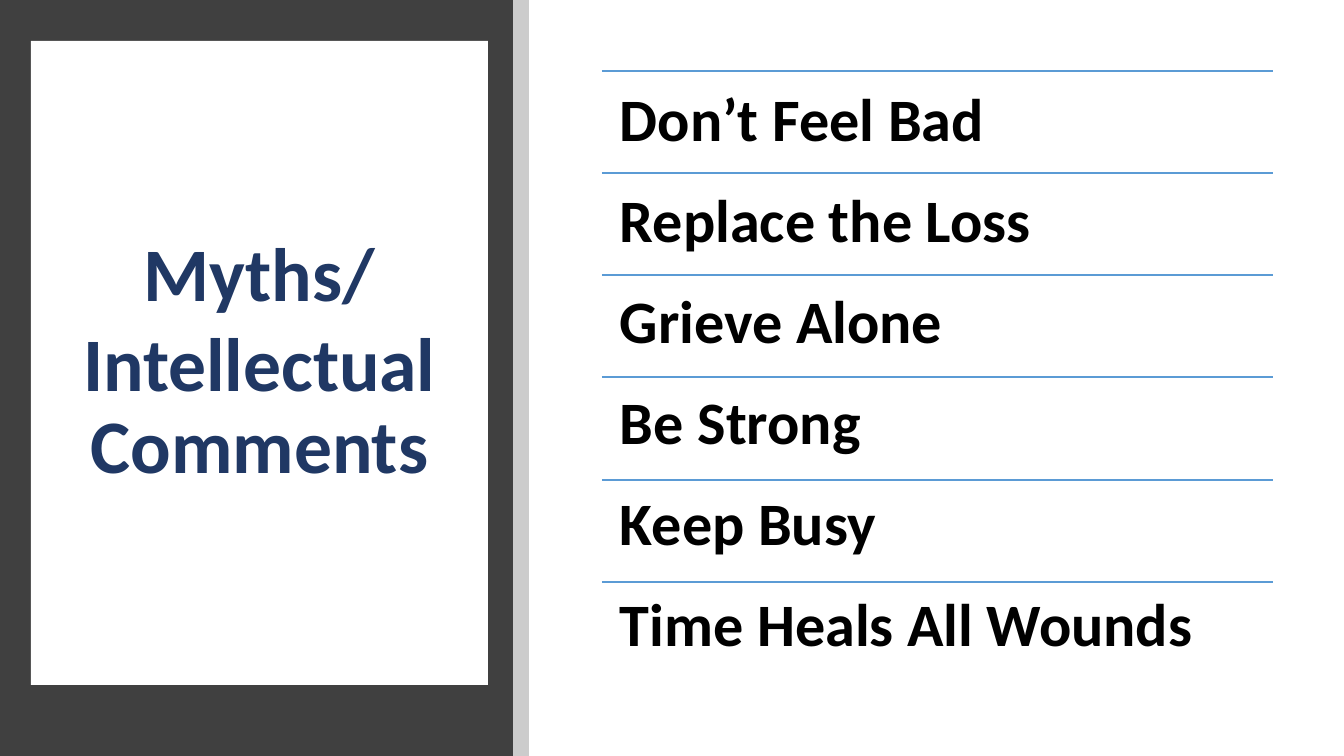
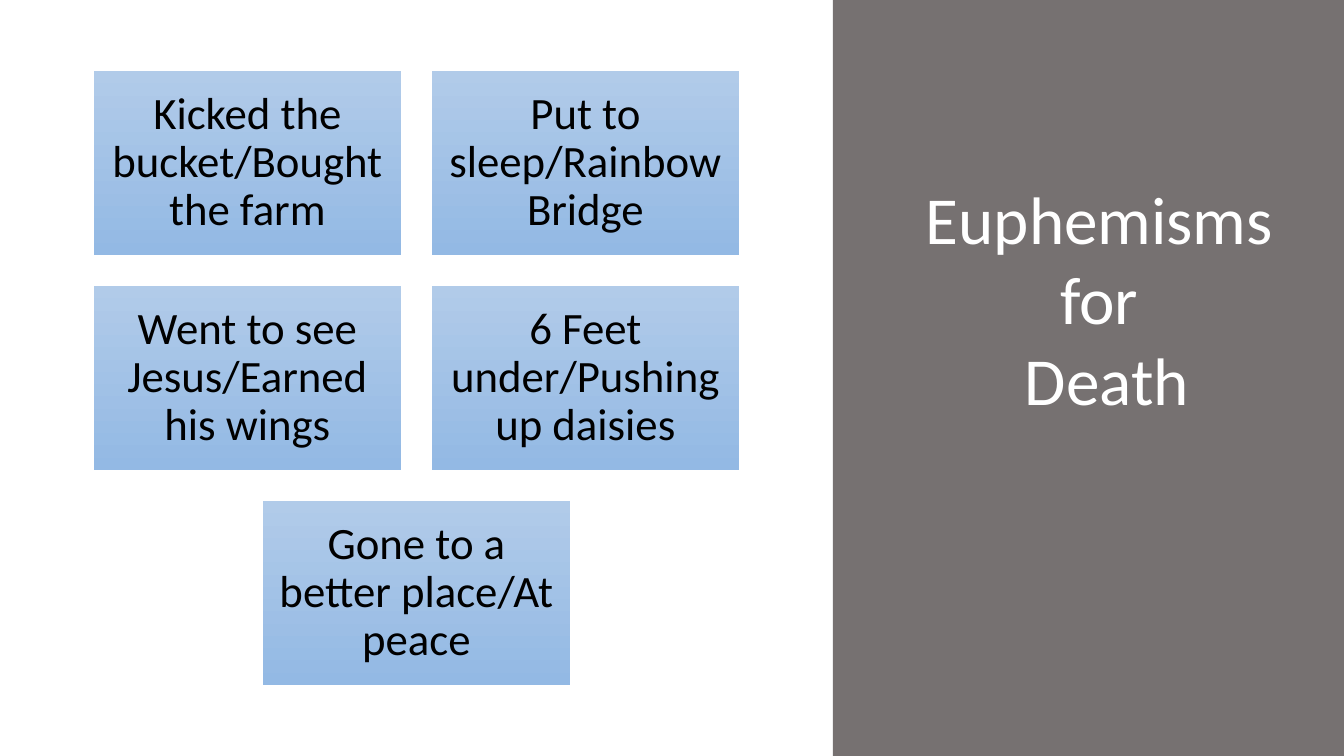
from pptx import Presentation
from pptx.dml.color import RGBColor
from pptx.enum.shapes import MSO_CONNECTOR as Connector, MSO_SHAPE as Preset
from pptx.enum.text import MSO_ANCHOR as Anchor, MSO_AUTO_SIZE as AutoSize, PP_ALIGN as Align
from pptx.oxml.ns import qn
from pptx.util import Emu, Pt
from lxml.etree import SubElement

SLIDE_W, SLIDE_H = 1344, 756
PX = 12192000 / SLIDE_W
TITLE_AND_CONTENT, TITLE_ONLY = 1, 5

COLORS = {
    "charcoal": "404040",
    "strip": "CCCCCC",
    "white": "FFFFFF",
    "black": "000000",
    "navy": "203864",
    "rule": "5B9BD5",
    "gray": "767171",
    "tile_top": "B1CBE9",
    "tile_bottom": "93B9E4",
}

CENTERED = {"alignment": Align.CENTER, "space_before": Pt(0)}
MYTH_TITLE = {
    "paragraph": {**CENTERED, "line_spacing": 0.9, "space_after": Pt(6)},
    "font": {"size": Pt(54), "bold": True},
    "color": "navy",
}
MYTH_LIST = {
    "paragraph": {"alignment": Align.LEFT, "line_spacing": 0.9,
                  "space_before": Pt(0), "space_after": Pt(25.8)},
    "font": {"size": Pt(43), "bold": True},
    "color": "black",
    "inset": 18,
    "anchor": Anchor.TOP,
}
EUPHEMISM_TITLE = {
    "paragraph": CENTERED,
    "font": {"size": Pt(48), "bold": False},
    "color": "white",
    "anchor": Anchor.TOP,
}
EUPHEMISM_TILE = {
    "paragraph": {**CENTERED, "line_spacing": 0.9},
    "font": {"size": Pt(32)},
    "color": "black",
    "inset": 13,
}

MYTHS = ["Don’t Feel Bad", "Replace the Loss", "Grieve Alone",
         "Be Strong", "Keep Busy", "Time Heals All Wounds"]
EUPHEMISM_ROWS = [
    ["Kicked the bucket/Bought the farm", "Put to sleep/Rainbow Bridge"],
    ["Went to see Jesus/Earned his wings", "6 Feet under/Pushing up daisies"],
    ["Gone to a better place/At peace"],
]


def px(length):
    return Emu(round(length * PX))


def color(name):
    return RGBColor.from_string(COLORS[name])


def apply(target, values):
    for name, value in values.items():
        setattr(target, name, value)


def place(shape, *box):
    apply(shape, dict(zip(("left", "top", "width", "height"), map(px, box))))


def write(shape, lines, style):
    frame = shape.text_frame
    frame.text = "\n".join(lines)
    apply(frame, {"word_wrap": True, "auto_size": AutoSize.NONE,
                  "vertical_anchor": style.get("anchor", Anchor.MIDDLE)})
    if "inset" in style:
        sides = ("left", "top", "right", "bottom")
        apply(frame, {f"margin_{side}": px(style["inset"]) for side in sides})
    for paragraph in frame.paragraphs:
        apply(paragraph, style["paragraph"])
        for run in paragraph.runs:
            apply(run.font, {"name": "Calibri", **style["font"]})
            run.font.color.rgb = color(style["color"])


def add_block(slide, *box):
    block = slide.shapes.add_shape(Preset.RECTANGLE, *map(px, box))
    block.shadow.inherit = False
    block.line.fill.background()
    return block


def add_band(slide, fill, left, width):
    band = add_block(slide, left, 0, width, SLIDE_H)
    band.fill.solid()
    band.fill.fore_color.rgb = color(fill)


def add_title(slide, lines, style, *box):
    title = slide.shapes.title
    title.element.getparent().append(title.element)
    place(title, *box)
    write(title, lines, style)
    return title


def add_rule(slide, left, top, width):
    rule = slide.shapes.add_connector(
        Connector.STRAIGHT, *map(px, (left, top, left + width, top)))
    rule.line.color.rgb = color("rule")
    rule.line.width = Pt(1)
    SubElement(rule.element.spPr, qn("a:effectLst"))


def add_ruled_list(slide, items, left, top, width, height):
    for index in range(len(items)):
        add_rule(slide, left, top + round(index * height / len(items)), width)
    body = slide.placeholders[1]
    place(body, left, top, width, height)
    write(body, items, MYTH_LIST)
    for paragraph in body.text_frame.paragraphs:
        properties = paragraph._p.get_or_add_pPr()
        for name in ("marL", "indent"):
            properties.set(name, "0")
        SubElement(properties, qn("a:buNone"))


def add_tile(slide, text, *box):
    tile = add_block(slide, *box)
    tile.fill.gradient()
    tile.fill.gradient_angle = 270
    for stop, name in zip(tile.fill.gradient_stops, ("tile_top", "tile_bottom")):
        stop.color.rgb = color(name)
    write(tile, [text], EUPHEMISM_TILE)


def add_tile_grid(slide, rows, left, top, width):
    tile_w, tile_h, gap = 307, 184, 31
    for row, texts in enumerate(rows):
        row_w = len(texts) * (tile_w + gap) - gap
        row_left = left + (width - row_w) // 2
        for column, text in enumerate(texts):
            add_tile(slide, text, row_left + column * (tile_w + gap),
                     top + row * (tile_h + gap), tile_w, tile_h)


def build_myths(deck):
    slide = deck.slides.add_slide(deck.slide_layouts[TITLE_AND_CONTENT])
    add_band(slide, "charcoal", 0, 513)
    add_band(slide, "strip", 513, 16)
    title = add_title(slide, ["Myths/", "Intellectual Comments"], MYTH_TITLE,
                      31, 41, 457, 644)
    title.fill.solid()
    title.fill.fore_color.rgb = color("white")
    add_ruled_list(slide, MYTHS, 602, 71, 671, 613)


def build_euphemisms(deck):
    slide = deck.slides.add_slide(deck.slide_layouts[TITLE_ONLY])
    add_band(slide, "gray", 833, 511)
    add_tile_grid(slide, EUPHEMISM_ROWS, 94, 71, 645)
    add_title(slide, ["Euphemisms for", " Death"], EUPHEMISM_TITLE,
              898, 172, 403, 254)


def main():
    deck = Presentation()
    apply(deck, {"slide_width": px(SLIDE_W), "slide_height": px(SLIDE_H)})
    build_myths(deck)
    build_euphemisms(deck)
    deck.save("out.pptx")


if __name__ == "__main__":
    main()
